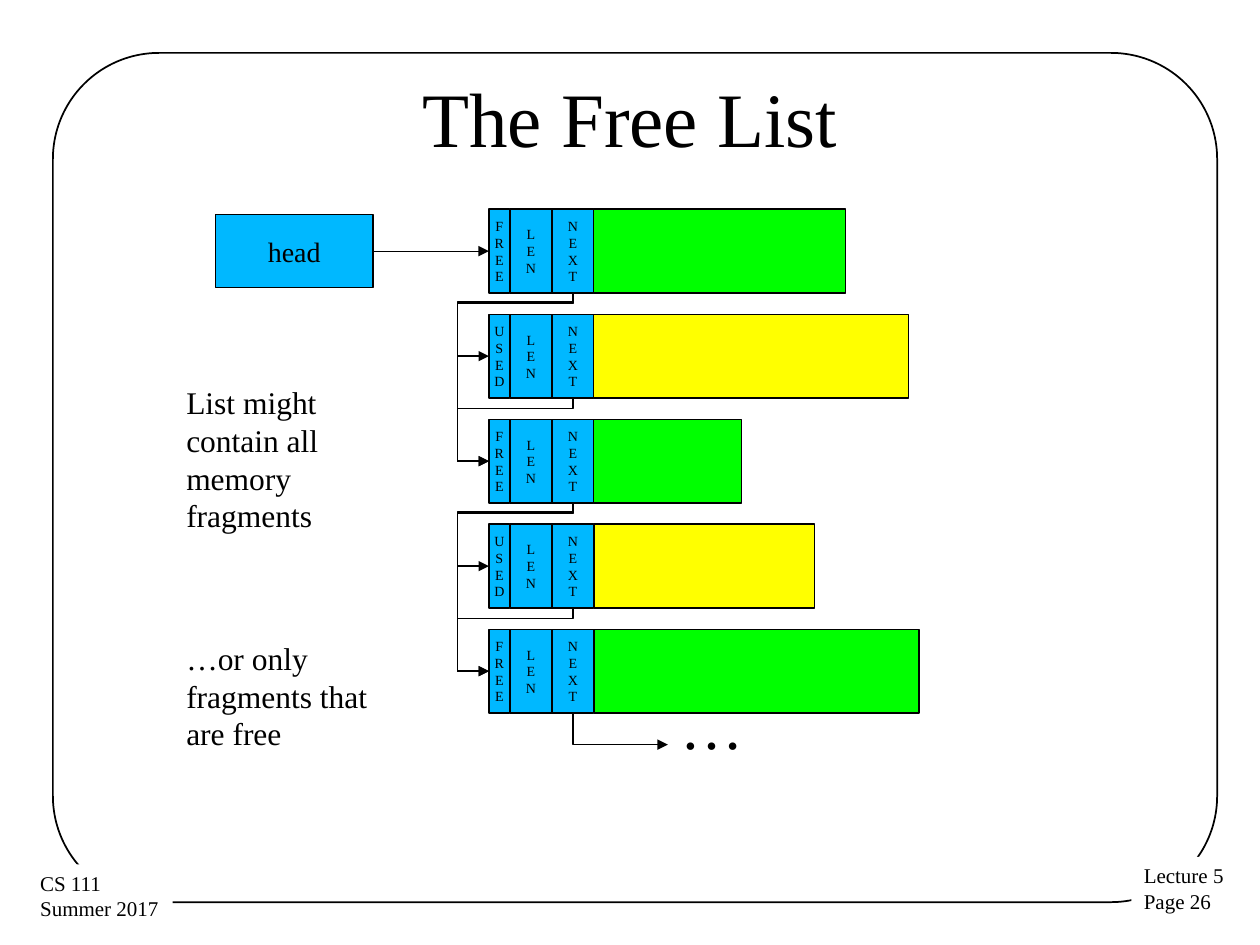
import pptx
import pptx.util
import pptx.dml.color
import pptx.enum.shapes
import pptx.enum.text
import pptx.oxml
import pptx.oxml.ns

Inches = pptx.util.Inches
SHAPE = pptx.enum.shapes.MSO_SHAPE
LINK = pptx.enum.shapes.MSO_CONNECTOR
ALIGN = pptx.enum.text.PP_ALIGN
ANCHOR = pptx.enum.text.MSO_ANCHOR

FONT = "Times New Roman"
COLORS = {"ink": "000000", "paper": "FFFFFF", "header": "00B8FF",
          "FREE": "00FF00", "USED": "FFFF00"}

TITLE = "The Free List"
FOOTERS = [(["Lecture 5", "Page 26"], (8.98, 6.8, 0.84, 0.51)),
           (["CS 111", "Summer 2017"], (0.22, 6.86, 1.15, 0.51))]
NOTES = [("List might contain all memory fragments", 18, (1.38, 2.99, 1.75, 1.72)),
         ("…or only fragments that are free", 18, (1.38, 5.02, 1.75, 1.72)),
         ("…", 36, (5.3, 5.4, 1.08, 0.7))]
# State and data width of each memory fragment
CHUNKS = [("FREE", 2), ("USED", 2.5), ("FREE", 1.17), ("USED", 1.75), ("FREE", 2.58)]
# Fragments joined by a next pointer, and how far it drops before turning
JUMPS = [(0, 1, 0.08), (1, 2, 0.08), (2, 3, 0.08), (3, 4, 0.08),
         (0, 2, 0.07), (2, 4, 0.07)]

LEFT, TOP = 3.88, 1.66
HIGH, STEP = 2 / 3, 5 / 6
FLAG, FIELD = 1 / 6, 1 / 3
NEXT = LEFT + FLAG + FIELD * 1.5
DETOUR = 0.25

deck = pptx.Presentation()
deck.slide_width, deck.slide_height = Inches(10), Inches(7.5)
slide = deck.slides.add_slide(deck.slide_layouts[6])
shapes = slide.shapes


def color(name):
    return pptx.dml.color.RGBColor.from_string(COLORS[name])


def write(shape, lines, size, align=ALIGN.LEFT, anchor=ANCHOR.TOP, wrap=True):
    frame = shape.text_frame
    frame.word_wrap = wrap
    frame.vertical_anchor = anchor
    for i, line in enumerate(lines):
        para = frame.add_paragraph() if i else frame.paragraphs[0]
        para.alignment = align
        run = para.add_run()
        run.text = line
        run.font.name = FONT
        run.font.size = pptx.util.Pt(size)
        run.font.color.rgb = color("ink")


def add_text(box, lines, size, **style):
    shape = shapes.add_textbox(*map(Inches, box))
    write(shape, lines, size, **style)
    return shape


def add_box(box, fill=None, lines=(), size=8, kind=SHAPE.RECTANGLE, width=0.75):
    shape = shapes.add_shape(kind, *map(Inches, box))
    shape.shadow.inherit = False
    if fill:
        shape.fill.solid()
        shape.fill.fore_color.rgb = color(fill)
    else:
        shape.fill.background()
    shape.line.color.rgb = color("ink")
    shape.line.width = pptx.util.Pt(width)
    write(shape, lines, size, ALIGN.CENTER, ANCHOR.MIDDLE, wrap=False)
    return shape


def add_arrow(kind, *ends):
    arrow = shapes.add_connector(kind, *map(Inches, ends))
    arrow.line.color.rgb = color("ink")
    arrow.line.width = pptx.util.Pt(0.75)
    tip = pptx.oxml.ns.qn("a:tailEnd")
    arrow.line.fill  # keep the solid line ahead of its arrowhead
    line = arrow.element.spPr.find(pptx.oxml.ns.qn("a:ln"))
    line.makeelement(tip)
    line.append(line.makeelement(tip, {"type": "triangle"}))
    arrow.element.spPr.append(line.makeelement(pptx.oxml.ns.qn("a:effectLst")))
    return arrow


def add_elbow(x1, y1, x2, y2, preset, turn, flip=False, adjust=()):
    """Bent arrow that leaves downwards: its frame is a quarter turn off its ends."""
    wide, high = y2 - y1, abs(x2 - x1)
    left = (x1 + x2 - wide) / 2
    top = (y1 + y2 - high) / 2
    start, stop = (left + wide, left) if flip else (left, left + wide)
    arrow = add_arrow(LINK.ELBOW, start, top, stop, top + high)
    props = arrow.element.spPr
    props.find(pptx.oxml.ns.qn("a:xfrm")).set("rot", str(turn * 60000))
    geom = props.find(pptx.oxml.ns.qn("a:prstGeom"))
    geom.set("prst", preset)
    guides = geom.find(pptx.oxml.ns.qn("a:avLst"))
    for i, part in enumerate(adjust, 1):
        guides.append(guides.makeelement(pptx.oxml.ns.qn("a:gd"), {
            "name": f"adj{i}", "fmla": f"val {round(part * 100000)}"}))


def add_chunk(row, state, width):
    """Draw header cells and data of one fragment; return the flag cell."""
    x, y = LEFT, TOP + row * STEP
    cells = []
    for word, wide, fill in [(state, FLAG, "header"), ("LEN", FIELD, "header"),
                             ("NEXT", FIELD, "header"), ("", width, state)]:
        cells.append(add_box((x, y, wide, HIGH), fill, list(word)))
        x += wide
    return cells[0]


frame = add_box((0.42, 0.42, 9.24, 6.74), kind=SHAPE.ROUNDED_RECTANGLE, width=1)
frame.adjustments[0] = 0.125
for lines, box in FOOTERS:
    footer = add_text(box, lines, 12, wrap=False)
    footer.fill.solid()
    footer.fill.fore_color.rgb = color("paper")
add_text((0.5, 0.3, 9, 1.25), [TITLE], 44, align=ALIGN.CENTER, anchor=ANCHOR.MIDDLE)

middle = TOP + HIGH / 2
head = add_box((1.71, middle - 0.29, 1.25, 0.58), "header", ["head"], 16)
flags = [add_chunk(row, *chunk) for row, chunk in enumerate(CHUNKS)]
entry = add_arrow(LINK.STRAIGHT, 2.96, middle, LEFT, middle)
entry.begin_connect(head, 3)
entry.end_connect(flags[0], 1)

for source, target, drop in JUMPS:
    y1 = TOP + source * STEP + HIGH
    y2 = middle + target * STEP
    add_elbow(NEXT, y1, LEFT, y2, "bentConnector4", 90,
              adjust=(drop / (y2 - y1), 1 + DETOUR / (NEXT - LEFT)))
end = TOP + (len(CHUNKS) - 1) * STEP + HIGH
add_elbow(NEXT, end, 5.3, end + 0.25, "bentConnector2", 270, flip=True)

for text, size, box in NOTES:
    add_text(box, [text], size)

deck.save("out.pptx")
